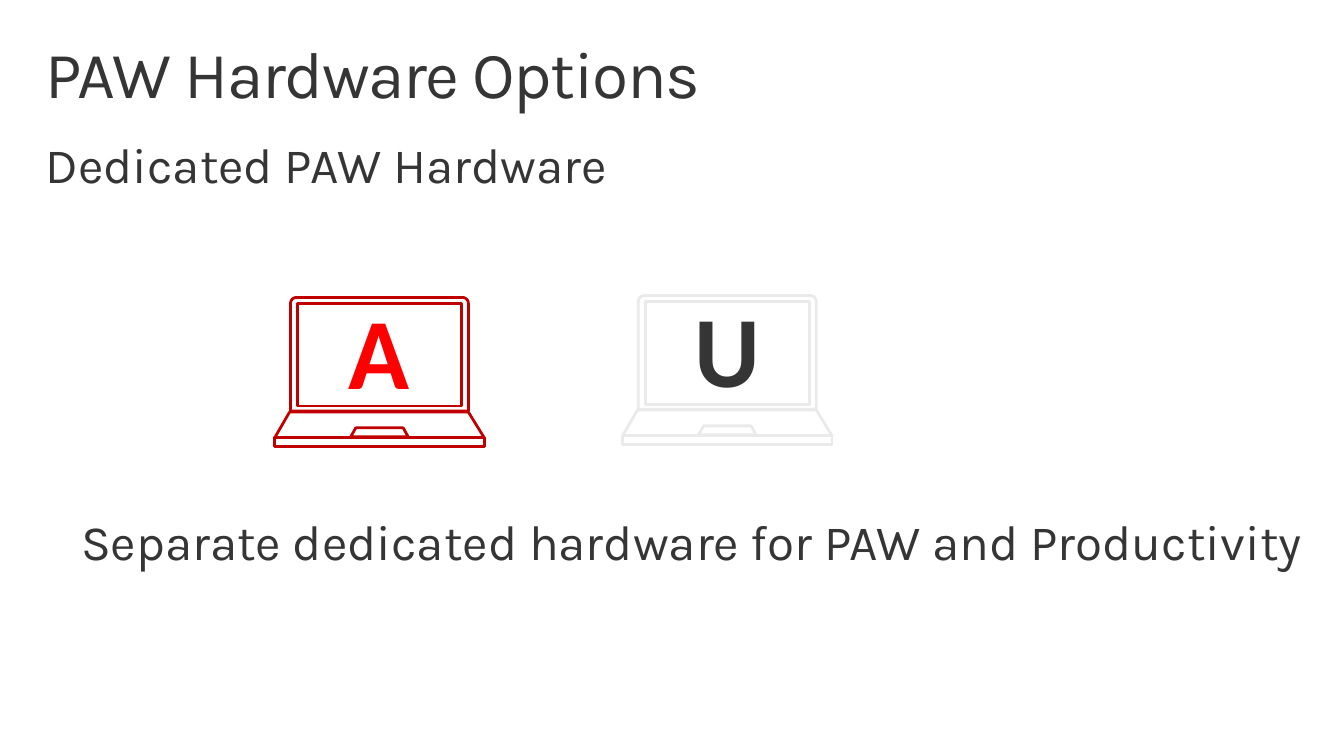
import math

import pptx
import pptx.dml.color
import pptx.enum.shapes
import pptx.enum.text
import pptx.util
from pptx.util import Inches

COLORS = {"ink": "353535", "paper": "FFFFFF", "admin": "C00000",
          "admin_letter": "FF0000", "user": "EAEAEA"}


def rgb(color):
    return pptx.dml.color.RGBColor.from_string(COLORS[color])


def rounded_lid(left, top, right, bottom, radius, steps=6):
    left_corner, right_corner = [], []
    for step in range(steps + 1):
        angle = math.pi / 2 * step / steps
        across, down = radius * math.cos(angle), radius * math.sin(angle)
        left_corner.append((left + radius - across, top + radius - down))
        right_corner.append((right - radius + down, top + radius - across))
    return left_corner + right_corner + [(right, bottom), (left, bottom)]


DISPLAY = [(0.23, 0.06), (0.23, 1.1), (1.89, 1.1), (1.89, 0.06)]
LID = rounded_lid(0.16, 0, 1.96, 1.15, 0.06)
TRACKPAD = [(0.82, 1.32), (0.77, 1.41), (1.35, 1.41), (1.3, 1.32)]
DECK = [(0.15, 1.16), (1.96, 1.16), (2.12, 1.42), (0, 1.42)]


class HardwareSlide:
    """Holds the slide and its style, and draws each kind of element."""

    def __init__(self, deck):
        self.slide = deck.slides.add_slide(deck.slide_layouts[5])
        self.font = "Karla"
        self.letter_font = "Calibri"

    def add_wording(self, frame, text, size, color="ink", font=None, bold=False,
                    margins=(0.16, 0.1), align="LEFT", wrap=True):
        frame.word_wrap = wrap
        frame.auto_size = pptx.enum.text.MSO_AUTO_SIZE.NONE
        frame.vertical_anchor = pptx.enum.text.MSO_ANCHOR.TOP
        frame.margin_left = frame.margin_right = Inches(margins[0])
        frame.margin_top = frame.margin_bottom = Inches(margins[1])
        paragraph = frame.paragraphs[0]
        paragraph.alignment = pptx.enum.text.PP_ALIGN[align]
        paragraph.line_spacing = 0.9
        run = paragraph.add_run()
        run.text = text
        run.font.name = font or self.font
        run.font.size = pptx.util.Pt(size)
        run.font.bold = bold
        run.font.color.rgb = rgb(color)
        return run

    def title(self, text, left, top, width, height):
        heading = self.slide.shapes.title
        heading.left, heading.top = Inches(left), Inches(top)
        heading.width, heading.height = Inches(width), Inches(height)
        run = self.add_wording(heading.text_frame, text, 48)
        run._r.get_or_add_rPr().set("spc", "-100")

    def statement(self, text, left, top, width, height):
        box = self.slide.shapes.add_textbox(
            Inches(left), Inches(top), Inches(width), Inches(height))
        self.add_wording(box.text_frame, text, 36)

    def outline(self, part, color):
        part.shadow.inherit = False
        part.fill.solid()
        part.fill.fore_color.rgb = rgb("paper")
        part.line.color.rgb = rgb(color)
        part.line.width = pptx.util.Pt(2)

    def panel(self, shapes, left, top, contours, color):
        placed = [[(Inches(left + x), Inches(top + y)) for x, y in contour]
                  for contour in contours]
        builder = shapes.build_freeform(*placed[0][0], scale=1.0)
        for index, points in enumerate(placed):
            if index:
                builder.move_to(*points[0])
            builder.add_line_segments(points[1:], close=True)
        self.outline(builder.convert_to_shape(), color)

    def laptop(self, left, top, letter, color, letter_color):
        shapes = self.slide.shapes.add_group_shape().shapes
        self.panel(shapes, left, top, [DISPLAY, LID], color)
        self.panel(shapes, left, top, [TRACKPAD, DECK], color)
        base = shapes.add_shape(
            pptx.enum.shapes.MSO_SHAPE.RECTANGLE,
            Inches(left), Inches(top + 1.42), Inches(2.12), Inches(0.09))
        self.outline(base, color)
        label = shapes.add_textbox(
            Inches(left + 0.72), Inches(top + 0.05), Inches(0.68), Inches(1.13))
        self.add_wording(label.text_frame, letter, 73.4, letter_color,
                         self.letter_font, True, (0, 0), "CENTER", False)


def main():
    deck = pptx.Presentation()
    deck.slide_width, deck.slide_height = Inches(13.6), Inches(7.65)
    page = HardwareSlide(deck)
    page.title("PAW Hardware Options", 0.3, 0.32, 13, 1)
    page.statement("Dedicated PAW Hardware", 0.3, 1.32, 13, 0.75)
    page.statement("Separate dedicated hardware for PAW and Productivity",
                   0.66, 5.14, 12.69, 1.83)
    page.laptop(2.78, 3.01, "A", "admin", "admin_letter")
    page.laptop(6.3, 2.99, "U", "user", "ink")
    deck.save("out.pptx")


if __name__ == "__main__":
    main()
